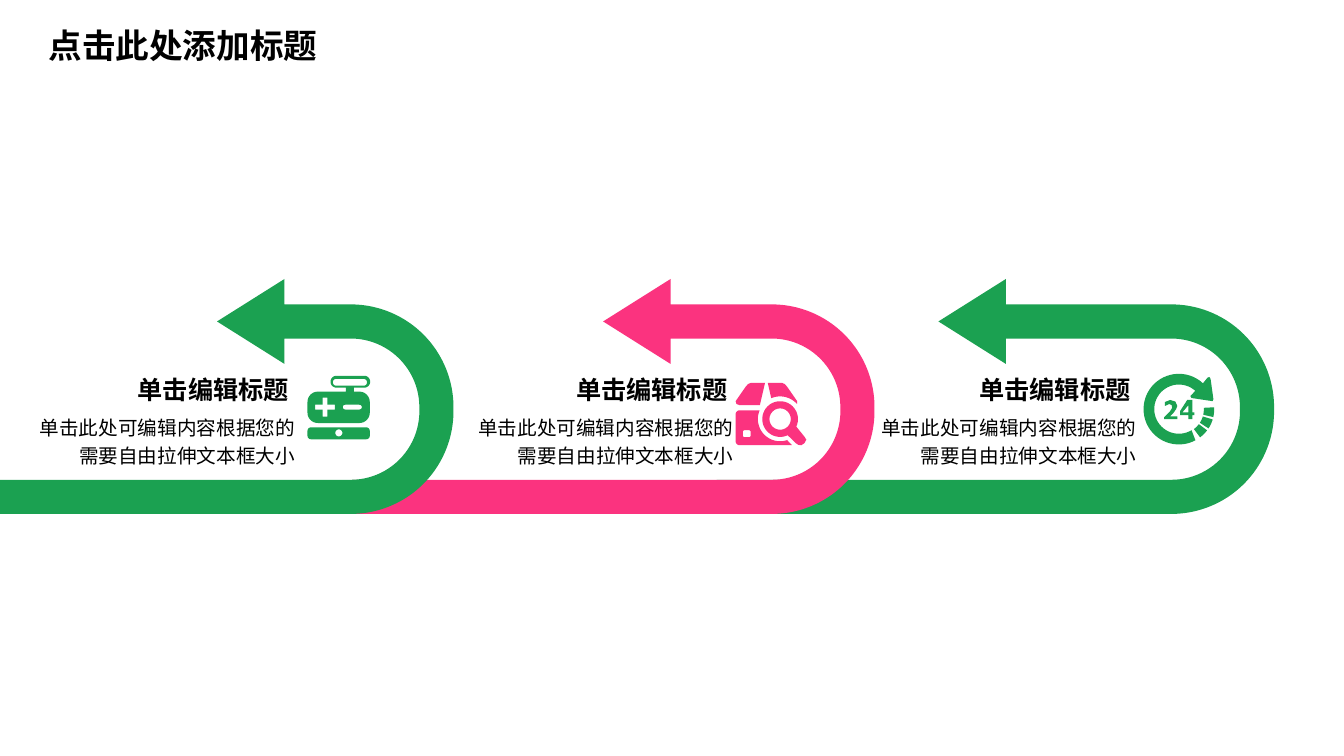
"""Build a slide with three U-turn arrows, each holding a heading, a text and an icon."""
from dataclasses import dataclass
from math import cos, radians, sin

from lxml.etree import SubElement
from pptx import Presentation
from pptx.dml.color import RGBColor
from pptx.enum.shapes import MSO_SHAPE as Shape
from pptx.enum.text import MSO_ANCHOR as Anchor, MSO_AUTO_SIZE as AutoSize, PP_ALIGN as Align
from pptx.oxml.ns import qn
from pptx.util import Cm, Pt


@dataclass(frozen=True)
class Theme:
    font: str = "Noto Sans CJK SC"
    green: RGBColor = RGBColor(0x1B, 0xA1, 0x51)
    pink: RGBColor = RGBColor(0xFB, 0x33, 0x7F)
    ink: RGBColor = RGBColor(0, 0, 0)
    title: Pt = Pt(24)
    heading: Pt = Pt(18)
    body: Pt = Pt(14)


theme = Theme()


def arc(x, y, radius, start, end, steps=24):
    angles = [radians(start + (end - start) * i / steps) for i in range(steps + 1)]
    return [(x + radius * cos(a), y + radius * sin(a)) for a in angles]


def rounded(x, y, width, height, radius):
    right, bottom = x + width - radius, y + height - radius
    corners = [(right, bottom), (x + radius, bottom), (x + radius, y + radius), (right, y + radius)]
    return [point for i, (cx, cy) in enumerate(corners)
            for point in arc(cx, cy, radius, 90 * i, 90 * i + 90, 8)]


presentation = Presentation()
presentation.slide_width, presentation.slide_height = Cm(33.87), Cm(19.05)
slide = presentation.slides.add_slide(presentation.slide_layouts[5])
shapes = slide.shapes

arrow_width, arrow_middle = 5.92, 9.99
band, head_half, head_length, bend = 0.86, 1.07, 1.7, 2.59
arrows = [
    (18.06, 14.05, 8.46, theme.green),
    (8.88, 13.16, 6.84, theme.pink),
    (0, 11.43, 5.96, theme.green),
]
for left, length, reach, color in arrows:
    arrow = shapes.add_shape(
        Shape.U_TURN_ARROW, Cm(left + (length - arrow_width) / 2), Cm(arrow_middle - length / 2),
        Cm(arrow_width), Cm(length))
    arrow.rotation = 90
    arrow._element.spPr.xfrm.set("flipH", "1")
    for i, size in enumerate((band, head_half, head_length, bend)):
        arrow.adjustments[i] = size / arrow_width
    arrow.adjustments[4] = reach / length
    arrow.shadow.inherit = False
    arrow.fill.solid()
    arrow.fill.fore_color.rgb = color
    arrow.line.fill.background()

plus = [(0.19, 0.73), (0.38, 0.73), (0.38, 0.55), (0.5, 0.55), (0.5, 0.73), (0.69, 0.73),
        (0.69, 0.85), (0.5, 0.85), (0.5, 1.03), (0.38, 1.03), (0.38, 0.85), (0.19, 0.85)]
gamepad = [
    [rounded(0, 0.4, 1.57, 0.79, 0.26), rounded(0.58, 0, 1, 0.3, 0.15),
     rounded(0.64, 0.08, 0.86, 0.17, 0.08), rounded(0.97, 0.3, 0.2, 0.1, 0),
     plus, rounded(0.89, 0.73, 0.48, 0.12, 0.06)],
    [rounded(0, 1.3, 1.57, 0.3, 0.09), arc(0.79, 1.44, 0.09, 0, 360)],
]

lens = (1.12, 0.91)
handle = [(1.52, 1.52), (1.58, 1.56), (1.65, 1.57), (1.73, 1.52), (1.78, 1.43), (1.73, 1.35)]
parcel = [
    [arc(*lens, 0.45, 25, -295, 40) + handle, arc(*lens, 0.27, 0, 360)],
    [[(0.1, 0.56), (0.61, 0.56), (0.74, 0), (0.38, 0), (0.31, 0.03), (0.25, 0.1),
      (0, 0.46), (0.02, 0.53)]],
    [[(0.81, 0), (1.17, 0), (1.24, 0.03), (1.3, 0.1), (1.55, 0.46), (1.55, 0.53)]
     + arc(*lens, 0.57, -42, -113)],
    [arc(*lens, 0.56, 203, 70) + [(1.3, 1.45), (1.42, 1.57)]
     + arc(0.1, 1.47, 0.1, 90, 180, 8) + arc(0.1, 0.79, 0.1, 180, 270, 8),
     rounded(0.18, 1.19, 0.2, 0.18, 0.05)],
]

dial = (0.88, 0.89)
arrowhead = [(1.6, 0.1), (1.65, 0.08), (1.68, 0.13), (1.75, 0.64), (1.73, 0.69),
             (1.2, 0.61), (1.17, 0.56)]
two = [(0.84, 1.14), (0.51, 1.14), (0.51, 1.09), (0.66, 0.94), (0.71, 0.86), (0.7, 0.79),
       (0.64, 0.76), (0.53, 0.81), (0.53, 0.71), (0.66, 0.66), (0.79, 0.7), (0.84, 0.81),
       (0.81, 0.89), (0.74, 0.99), (0.66, 1.07), (0.84, 1.07)]
four = [(1.27, 1.04), (1.22, 1.04), (1.22, 1.14), (1.12, 1.14), (1.12, 1.04), (0.91, 1.04),
        (0.91, 0.94), (1.09, 0.66), (1.22, 0.66), (1.22, 0.97), (1.27, 0.97)]
clock = [[arc(*dial, 0.89, start, start + 16, 8) + arc(*dial, 0.63, start + 16, start, 8)]
         for start in (-3, 17, 37)]
clock += [
    [arc(*dial, 0.89, 62, 313, 40) + arrowhead + arc(*dial, 0.62, 312, 59, 40)],
    [two],
    [four, [(1.12, 0.97), (1.12, 0.79), (0.97, 0.97)]],
]

icons = [
    (7.75, 9.47, theme.green, gamepad),
    (18.54, 9.65, theme.pink, parcel),
    (28.83, 9.42, theme.green, clock),
]
for left, top, color, parts in icons:
    for contours in parts:
        builder = shapes.build_freeform(*[Cm(value) for value in contours[0][0]])
        for i, contour in enumerate(contours):
            points = [(Cm(x), Cm(y)) for x, y in contour]
            if i:
                builder.move_to(*points[0])
            builder.add_line_segments(points[1:], close=True)
        part = builder.convert_to_shape(Cm(left), Cm(top))
        part.shadow.inherit = False
        part.fill.solid()
        part.fill.fore_color.rgb = color
        part.line.fill.background()

title = shapes.title
title.left, title.top, title.width, title.height = Cm(0.97), Cm(0.51), Cm(9.6), Cm(1.27)
texts = [(title, "点击此处添加标题", theme.title, True)]
for left in (0.81, 11.86, 22.02):
    heading = shapes.add_textbox(Cm(left + 2.41), Cm(9.3), Cm(4.67), Cm(1.02))
    body = shapes.add_textbox(Cm(left), Cm(10.36), Cm(6.63), Cm(1.4))
    frame = body.text_frame
    frame.margin_left = frame.margin_right = frame.margin_top = frame.margin_bottom = 0
    texts += [
        (heading, "单击编辑标题", theme.heading, True),
        (body, "单击此处可编辑内容根据您的需要自由拉伸文本框大小", theme.body, False),
    ]

for shape, text, size, bold in texts:
    frame = shape.text_frame
    frame.word_wrap = True
    frame.auto_size = AutoSize.NONE
    frame.vertical_anchor = Anchor.TOP
    paragraph = frame.paragraphs[0]
    paragraph.alignment = Align.LEFT if bold else Align.RIGHT
    if not bold:
        paragraph.line_spacing = 1.2
        paragraph.space_after = Pt(6)
    run = paragraph.add_run()
    run.text = text
    run.font.size, run.font.bold, run.font.name = size, bold, theme.font
    run.font.color.rgb = theme.ink
    SubElement(run.font._element, qn("a:ea"), typeface=theme.font)

presentation.save("out.pptx")
